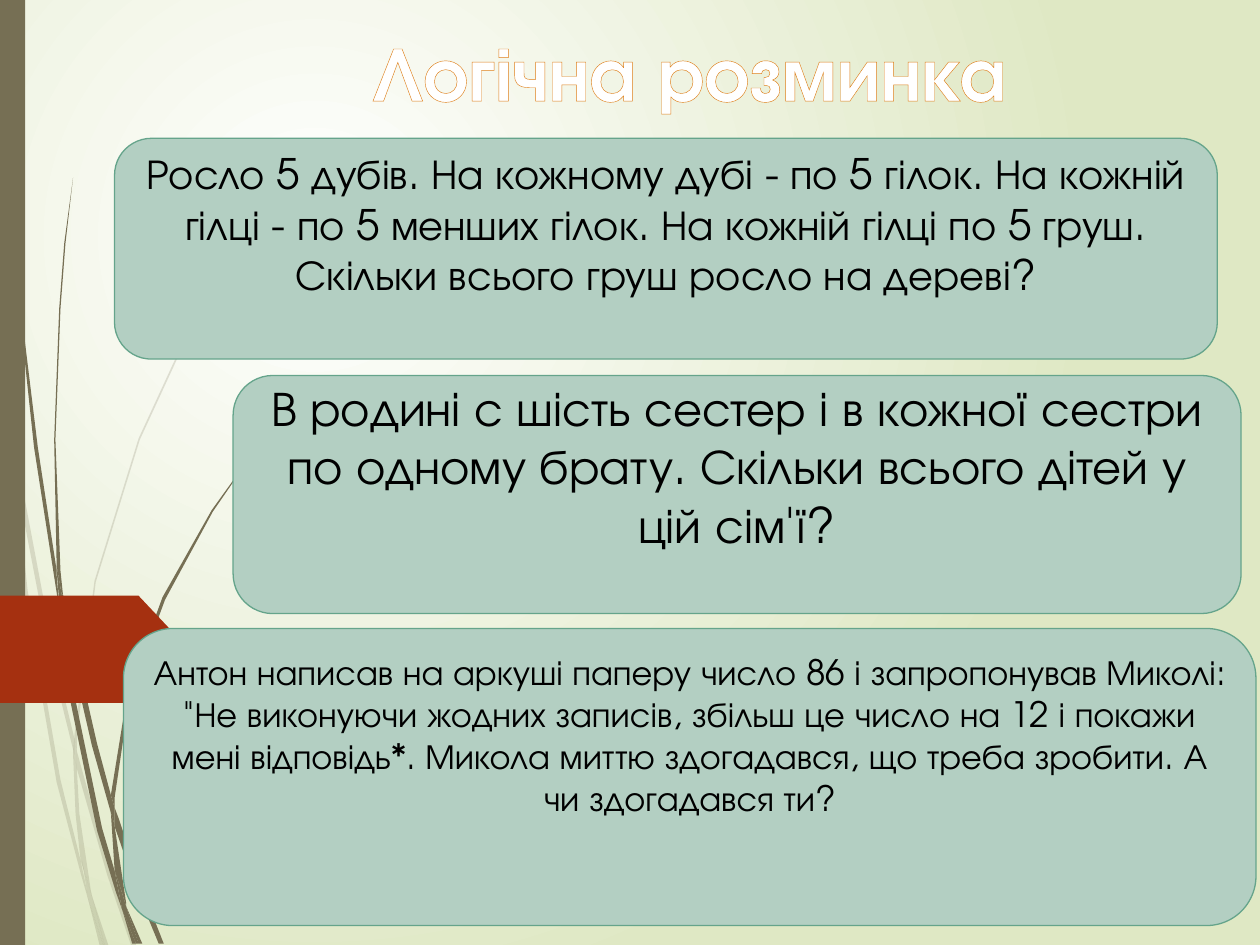
from lxml.etree import SubElement
from pptx import Presentation
from pptx.dml.color import RGBColor
from pptx.enum.shapes import MSO_SHAPE
from pptx.enum.text import MSO_ANCHOR, MSO_AUTO_SIZE, PP_ALIGN
from pptx.oxml import parse_xml
from pptx.oxml.ns import nsdecls, qn
from pptx.util import Cm, Pt

BLACK = RGBColor(0x00, 0x00, 0x00)
WHITE = RGBColor(0xFF, 0xFF, 0xFF)
PALE_GREEN = RGBColor(0xDF, 0xE8, 0xC4)
BOX_FILL = RGBColor(0xB3, 0xCF, 0xC2)
BOX_LINE = RGBColor(0x65, 0xA4, 0x8B)
OLIVE = RGBColor(0x76, 0x6F, 0x54)
RED = RGBColor(0xA5, 0x30, 0x10)
ORANGE = RGBColor(0xDE, 0x7E, 0x18)
FONT = "TeX Gyre Adventor"
CM_PER_INCH = 2.54

# Outlines of the grass blades, as x, y points in inches.
PALE_BLADES = [
    [(0.08, 3.5), (0.06, 3.22), (0, 2.82), (0, 2.99), (0.07, 3.44)],
    [(0.4, 5.22), (0.59, 5.99), (0.59, 5.86), (0.43, 5.2), (0.1, 3.45), (0.12, 3.76)],
    [(0.64, 6.07), (0.61, 5.96), (0.61, 6.1), (0.85, 6.94), (1.04, 7.5), (1.08, 7.5),
     (0.88, 6.92)],
    [(0.83, 7.5), (0.86, 7.5), (0.73, 7.11)],
    [(0.64, 6.83), (0.48, 6.19), (0.22, 4.69), (0.12, 3.76), (0.08, 3.5), (0.19, 4.7),
     (0.45, 6.21), (0.64, 6.93), (0.7, 7.14), (0.69, 7.07)],
    [(0.58, 5.99), (0.6, 6.46), (0.64, 6.83), (0.67, 6.92), (0.73, 7.11), (0.72, 7.06),
     (0.63, 6.46), (0.61, 6.1), (0.61, 6.08)],
    [(0.61, 5.84), (0.76, 4.62), (1.11, 3.49), (1.59, 2.45), (1.87, 1.98), (2.01, 1.75),
     (2.17, 1.54), (2.17, 1.53), (2.01, 1.75), (1.86, 1.97), (1.58, 2.44), (1.1, 3.48),
     (0.75, 4.61), (0.59, 5.84), (0.59, 5.86), (0.61, 5.96)],
    [(0.7, 7.14), (0.79, 7.5), (0.82, 7.5)],
    [(0.61, 6.08), (0.61, 6.1), (0.61, 5.96), (0.59, 5.86), (0.58, 5.99)],
    [(0.67, 6.92), (0.65, 6.83), (0.69, 7.07), (0.7, 7.14), (0.82, 7.5), (0.83, 7.5),
     (0.73, 7.11)],
]
DARK_BLADES = [
    [(0.05, 1.1), (0.14, 2.33), (0.27, 3.55), (0.46, 4.77), (0.47, 4.81), (0.45, 4.57),
     (0.45, 4.53), (0.3, 3.55), (0.15, 2.32), (0.06, 1.09), (0.04, 0.48), (0.03, 0),
     (0.02, 0), (0.03, 0.48)],
    [(0.73, 5.92), (0.88, 6.45), (0.88, 6.31), (0.77, 5.9), (0.5, 4.72), (0.53, 5.05)],
    [(0.94, 6.49), (0.91, 6.41), (0.91, 6.56), (1.09, 7.08), (1.26, 7.49), (1.3, 7.49),
     (1.13, 7.06)],
    [(0.91, 6.91), (0.81, 6.57), (0.6, 5.56), (0.53, 5.05), (0.47, 4.77), (0.56, 5.57),
     (0.77, 6.59), (0.92, 7.08), (0.97, 7.22), (0.96, 7.17)],
    [(0.5, 4.72), (0.48, 4.53), (0.44, 3.49), (0.48, 2.45), (0.52, 1.93), (0.58, 1.41),
     (0.51, 1.93), (0.47, 2.45), (0.43, 3.49), (0.45, 4.49), (0.49, 4.72)],
    [(1.1, 7.49), (1.13, 7.49), (1, 7.19)],
    [(0.47, 4.77), (0.53, 5.05), (0.5, 4.72), (0.49, 4.72), (0.45, 4.49), (0.45, 4.53)],
    [(0.91, 6.33), (1.03, 5.52), (1.31, 4.76), (1.69, 4.06), (1.91, 3.74), (2.03, 3.59),
     (2.16, 3.44), (2.15, 3.44), (2.03, 3.58), (1.91, 3.73), (1.68, 4.05), (1.29, 4.74),
     (1.01, 5.51), (0.88, 6.31), (0.91, 6.41)],
    [(0.97, 7.22), (1.05, 7.49), (1.08, 7.49)],
    [(0.88, 6.45), (0.91, 6.91), (0.96, 7.06), (1, 7.19), (1, 7.16), (0.91, 6.56),
     (0.9, 6.51)],
    [(0.88, 6.45), (0.9, 6.51), (0.91, 6.56), (0.91, 6.41), (0.88, 6.31)],
    [(0.96, 7.06), (0.91, 6.91), (0.96, 7.17), (0.97, 7.22), (1.08, 7.49), (1.1, 7.49),
     (1, 7.19)],
]

# Text, font size, (left, top, width, height) and space kept free below the text, in cm.
PUZZLES = [
    ("Росло 5 дубів. На кожному дубі - по 5 гілок. На кожній гілці - по 5 менших гілок. "
     "На кожній гілці по 5 груш. Скільки всього груш росло на дереві?",
     24, (2.31, 2.79, 22.23, 4.45), 1.02),
    ("В родині с шість сестер і в кожної сестри по одному брату. "
     "Скільки всього дітей у цій сім'ї?",
     28, (4.7, 7.57, 20.32, 4.8), 1.18),
    ("Антон написав на аркуші паперу число 86 і запропонував Миколі: "
     "\"Не виконуючи жодних записів, збільш це число на 12 і покажи мені відповідь*. "
     "Микола миттю здогадався, що треба зробити. А чи здогадався ти?",
     20, (2.49, 12.67, 22.83, 5.99), 1.71),
]


def set_attributes(target, values):
    for name, value in values.items():
        setattr(target, name, value)


def set_background(slide):
    """Radial gradient from white to pale green."""
    background_fill = slide.background.fill
    background_fill.gradient()
    for stop, color in zip(background_fill.gradient_stops, (WHITE, PALE_GREEN)):
        stop.color.rgb = color
    gradient = slide.background._cSld.bg.bgPr.find(qn("a:gradFill"))
    gradient.replace(gradient.find(qn("a:lin")), parse_xml(
        f'<a:path {nsdecls("a")} path="circle">'
        '<a:fillToRect l="50000" t="50000" r="100000" b="100000"/></a:path>'))


def paint(shape, fill, line=None):
    shape.shadow.inherit = False
    shape.fill.solid()
    shape.fill.fore_color.rgb = fill
    if line is None:
        shape.line.fill.background()
    else:
        shape.line.color.rgb = line
        shape.line.width = Pt(0.75)


def add_shape(slide, preset, box, fill, line=None):
    shape = slide.shapes.add_shape(preset, *map(Cm, box))
    paint(shape, fill, line)
    return shape


def add_blade(slide, outline, opacity):
    start, *others = [(Cm(x * CM_PER_INCH), Cm(y * CM_PER_INCH)) for x, y in outline]
    builder = slide.shapes.build_freeform(*start)
    builder.add_line_segments(others, close=True)
    shape = builder.convert_to_shape()
    paint(shape, OLIVE)
    if opacity < 100:
        color = shape.fill._xPr.find(qn("a:solidFill"))[0]
        SubElement(color, qn("a:alpha"), val=str(opacity * 1000))


def write_text(shape, text, frame_format, font_format, color):
    frame = shape.text_frame
    set_attributes(frame, {"word_wrap": True, **frame_format})
    paragraph = frame.paragraphs[0]
    paragraph.alignment = PP_ALIGN.CENTER
    run = paragraph.add_run()
    run.text = text
    set_attributes(run.font, {"name": FONT, **font_format})
    run.font.color.rgb = color
    return run


def add_puzzle(slide, text, size, box, space_below):
    shape = add_shape(slide, MSO_SHAPE.ROUNDED_RECTANGLE, box, BOX_FILL, BOX_LINE)
    frame_format = {"vertical_anchor": MSO_ANCHOR.MIDDLE,
                    "margin_top": 0, "margin_bottom": Cm(space_below)}
    write_text(shape, text, frame_format, {"size": Pt(size)}, BLACK)


def set_title(slide, text):
    title = slide.shapes.title
    set_attributes(title, {"left": Cm(5.51), "top": Cm(0.36),
                           "width": Cm(16.79), "height": Cm(2.13)})
    frame_format = {"vertical_anchor": MSO_ANCHOR.TOP,
                    "auto_size": MSO_AUTO_SIZE.SHAPE_TO_FIT_TEXT}
    run = write_text(title, text, frame_format, {"size": Pt(44), "bold": True}, WHITE)
    run.font._element.insert(0, parse_xml(
        f'<a:ln {nsdecls("a")} w="{Pt(0.52)}"><a:solidFill>'
        f'<a:srgbClr val="{ORANGE}"/></a:solidFill></a:ln>'))


def main():
    presentation = Presentation()
    presentation.slide_width, presentation.slide_height = Cm(25.4), Cm(19.05)
    slide = presentation.slides.add_slide(presentation.slide_layouts[5])
    set_background(slide)
    for blades, opacity in ((PALE_BLADES, 20), (DARK_BLADES, 100)):
        for outline in blades:
            add_blade(slide, outline, opacity)
    add_shape(slide, MSO_SHAPE.RECTANGLE, (0, 0, 0.51, 19.05), OLIVE)
    arrow = add_shape(slide, MSO_SHAPE.PENTAGON, (0, 12.01, 3.81, 2.16), RED)
    arrow.adjustments[0] = 0.47
    for puzzle in PUZZLES:
        add_puzzle(slide, *puzzle)
    set_title(slide, "Логічна розминка")
    presentation.save("out.pptx")


if __name__ == "__main__":
    main()
